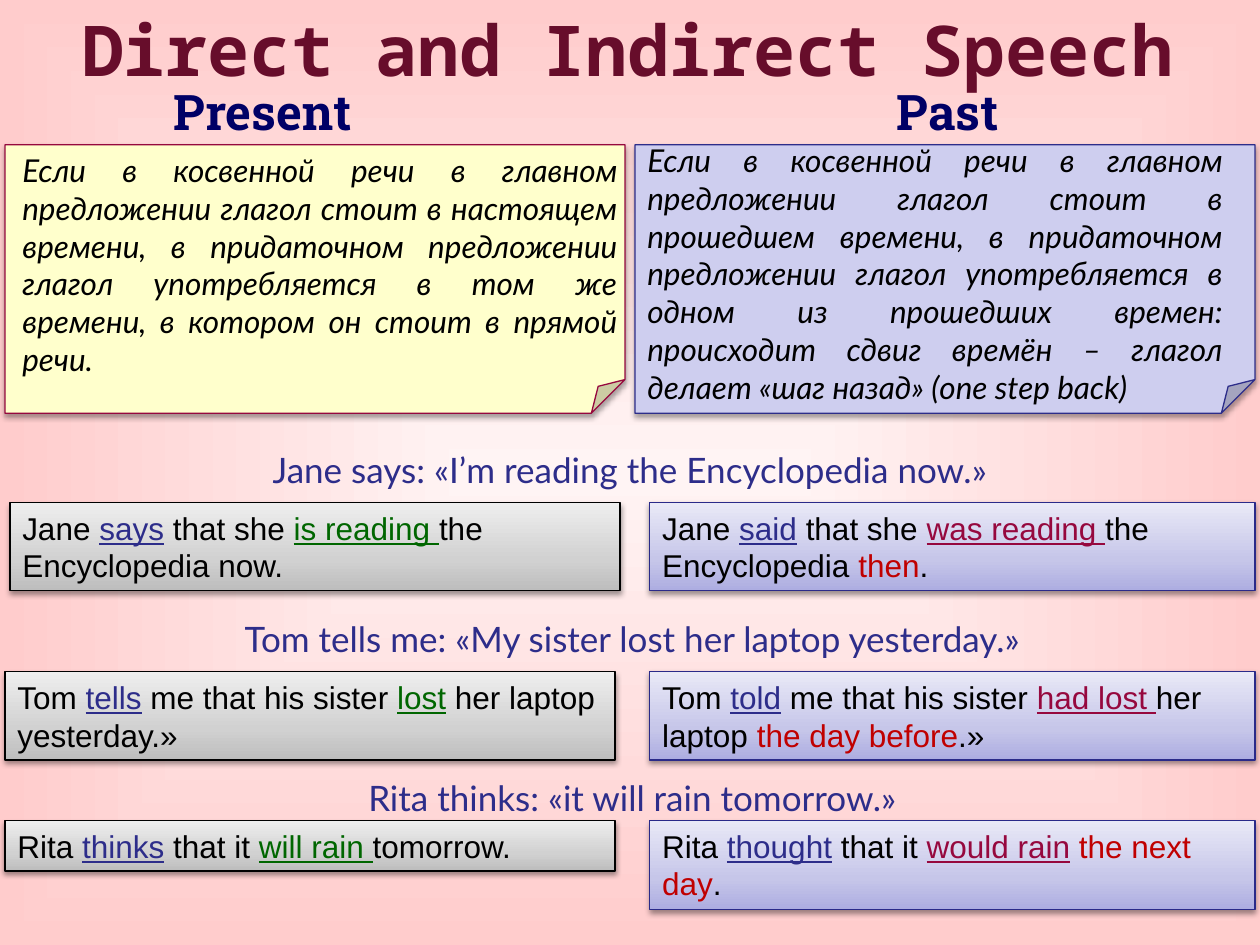
from lxml import etree
from pptx import Presentation
from pptx import util as u
from pptx.dml.color import RGBColor
from pptx.enum import shapes, text
from pptx.oxml.ns import qn

BLACK, INDIGO, NAVY, WINE = "000000", "2D2D8A", "000066", "670D2B"
CENTER, LEFT, JUSTIFY = text.PP_ALIGN.CENTER, text.PP_ALIGN.LEFT, text.PP_ALIGN.JUSTIFY

# Run styles: colour, underlined
STYLES = {
    "plain": (BLACK, False),
    "reporting": (INDIGO, True),
    "present": ("006600", True),
    "past": ("96083E", True),
    "time": ("C00000", False),
}
BACKGROUND = [(0, "FFF4F4"), (100, "FFCCCC")]
GREY = {"stops": [(0, "BDBDBD"), (35, "D1D1D1"), (100, "EEEEEE")], "line": BLACK}
LILAC = {"stops": [(0, "ADADE1"), (35, "C6C6E9"), (100, "E9E9F7")], "line": "2A2A89"}

# Text, left, top, width, height, font, size, colour
HEADINGS = [
    ("Direct and Indirect Speech", 0, 0, 25.3, 1.96, "Noto Sans Mono", 40, WINE),
    ("Present", 2.29, 1.52, 6, 1.45, "Roboto Slab", 28, NAVY),
    ("Past", 16.51, 1.52, 5.2, 1.45, "Roboto Slab", 28, NAVY),
]
# Note left, fill, line; text left, top, width, height; rule
RULES = [
    (0.1, "FFFFCC", "96083E", (0.2, 2.92, 12.5, 4.83),
     "Если в косвенной речи в главном предложении глагол стоит в настоящем времени, "
     "в придаточном предложении глагол употребляется в том же времени, "
     "в котором он стоит в прямой речи."),
    (12.8, "CECEEF", INDIGO, (12.8, 2.72, 12.1, 5.59),
     "Если в косвенной речи в главном предложении глагол стоит в прошедшем времени, "
     "в придаточном предложении глагол употребляется в одном из прошедших времен: "
     "происходит сдвиг времён – глагол делает «шаг назад» (one step back)"),
]
NOTE_TOP, NOTE_WIDTH, NOTE_HEIGHT = 2.92, 12.5, 5.41

EXAMPLES = [
    {"quote": "Jane says: «I’m reading the Encyclopedia now.»",
     "quote_place": (0.1, 8.92, 25.2, 1.11),
     "top": 10.13, "left": 0.2, "heights": (1.78, 1.78),
     "present": [("Jane ", "plain"), ("says", "reporting"), (" that she ", "plain"),
                 ("is reading ", "present"), ("the Encyclopedia now.", "plain")],
     "past": [("Jane ", "plain"), ("said", "reporting"), (" that she ", "plain"),
              ("was reading ", "past"), ("the Encyclopedia ", "plain"),
              ("then", "time"), (".", "plain")]},
    {"quote": "Tom tells me: «My sister lost her laptop yesterday.»",
     "quote_place": (0.2, 12.32, 25.1, 1.11),
     "top": 13.54, "left": 0.1, "heights": (1.78, 1.78),
     "present": [("Tom ", "plain"), ("tells", "reporting"),
                 (" me that his sister ", "plain"), ("lost", "present"),
                 (" her laptop yesterday.»", "plain")],
     "past": [("Tom ", "plain"), ("told", "reporting"),
              (" me that his sister ", "plain"), ("had lost ", "past"),
              ("her laptop ", "plain"), ("the day before", "time"), (".»", "plain")]},
    {"quote": "Rita thinks: «it will rain tomorrow.»",
     "quote_place": (0.2, 15.52, 25.1, 1.11),
     "top": 16.54, "left": 0.1, "heights": (1.02, 1.8),
     "present": [("Rita ", "plain"), ("thinks", "reporting"), (" that it ", "plain"),
                 ("will rain ", "present"), ("tomorrow.", "plain")],
     "past": [("Rita ", "plain"), ("thought", "reporting"), (" that it ", "plain"),
              ("would rain", "past"), (" ", "plain"), ("the next day", "time"),
              (".", "plain")]},
]


def color(value):
    return RGBColor.from_string(value)


def box(left, top, width, height):
    return [u.Cm(value) for value in (left, top, width, height)]


def add_xml(parent, tag, **attributes):
    element = etree.SubElement(parent, qn(tag))
    for name, value in attributes.items():
        element.set(name, str(value))
    return element


def set_gradient(gradient, stops, angle=None):
    """Refill a gradFill element: linear at an angle, or out from the centre."""
    for child in list(gradient):
        gradient.remove(child)
    stop_list = add_xml(gradient, "a:gsLst")
    for position, value in stops:
        stop = add_xml(stop_list, "a:gs", pos=position * 1000)
        add_xml(stop, "a:srgbClr", val=value)
    if angle is None:
        center = add_xml(gradient, "a:path", path="shape")
        add_xml(center, "a:fillToRect", l=50000, t=50000, r=50000, b=50000)
    else:
        add_xml(gradient, "a:lin", ang=angle * 60000, scaled=0)


def set_fold(shape, share):
    """Set the fold of a folded corner, which has no entry in adjustments."""
    geometry = shape.element.spPr.find(qn("a:prstGeom"))
    for child in list(geometry):
        geometry.remove(child)
    guides = add_xml(geometry, "a:avLst")
    add_xml(guides, "a:gd", name="adj", fmla=f"val {round(share * 100000)}")


def add_shadow(shape, distance, opacity):
    shape.shadow.inherit = False
    effects = shape.element.spPr.find(qn("a:effectLst"))
    shadow = add_xml(effects, "a:outerShdw", blurRad=u.Pt(3.1), dist=u.Pt(distance),
                     dir=90 * 60000, rotWithShape=0)
    add_xml(add_xml(shadow, "a:srgbClr", val=BLACK), "a:alpha", val=opacity * 1000)


def add_outlined(slide, kind, place, line):
    shape = slide.shapes.add_shape(kind, *box(*place))
    shape.line.color.rgb = color(line)
    shape.line.width = u.Pt(0.75)
    return shape


def write(shape, runs, font, size, align, bold=False, italic=False):
    """Fill a shape with runs of (text, colour, underlined)."""
    frame = shape.text_frame
    frame.word_wrap = True
    frame.vertical_anchor = text.MSO_ANCHOR.TOP
    frame.auto_size = text.MSO_AUTO_SIZE.SHAPE_TO_FIT_TEXT
    paragraph = frame.paragraphs[0]
    paragraph.alignment = align
    for content, run_color, underlined in runs:
        run = paragraph.add_run()
        run.text = content
        run.font.name, run.font.size = font, u.Pt(size)
        run.font.bold, run.font.italic, run.font.underline = bold, italic, underlined
        run.font.color.rgb = color(run_color)


def add_label(slide, content, place, font, size, label_color, align=CENTER, **emphasis):
    label = slide.shapes.add_textbox(*box(*place))
    write(label, [(content, label_color, False)], font, size, align, **emphasis)


def add_sentence(slide, runs, place, look):
    shape = add_outlined(slide, shapes.MSO_SHAPE.RECTANGLE, place, look["line"])
    shape.fill.gradient()
    set_gradient(shape.element.spPr.find(qn("a:gradFill")), look["stops"], 270)
    add_shadow(shape, 1.6, 38)
    write(shape, [(content, *STYLES[style]) for content, style in runs], "Arial", 18, LEFT)


def main():
    presentation = Presentation()
    presentation.slide_width, presentation.slide_height = u.Cm(25.4), u.Cm(19.05)
    slide = presentation.slides.add_slide(presentation.slide_layouts[6])
    slide.background.fill.gradient()
    set_gradient(next(slide.element.iter(qn("a:gradFill"))), BACKGROUND)

    for left, fill, line, text_place, rule in RULES:
        place = (left, NOTE_TOP, NOTE_WIDTH, NOTE_HEIGHT)
        note = add_outlined(slide, shapes.MSO_SHAPE.FOLDED_CORNER, place, line)
        set_fold(note, 0.125)
        note.fill.solid()
        note.fill.fore_color.rgb = color(fill)
        add_shadow(note, 1.8, 35)
        add_label(slide, rule, text_place, "Lato", 18, BLACK, JUSTIFY, italic=True)

    for content, *place, font, size, heading_color in HEADINGS:
        add_label(slide, content, place, font, size, heading_color, bold=True)

    for example in EXAMPLES:
        add_label(slide, example["quote"], example["quote_place"], "Lato", 20, INDIGO)
        present_height, past_height = example["heights"]
        add_sentence(slide, example["present"],
                     (example["left"], example["top"], 12.3, present_height), GREY)
        add_sentence(slide, example["past"],
                     (13.1, example["top"], 12.2, past_height), LILAC)

    presentation.save("out.pptx")


if __name__ == "__main__":
    main()
